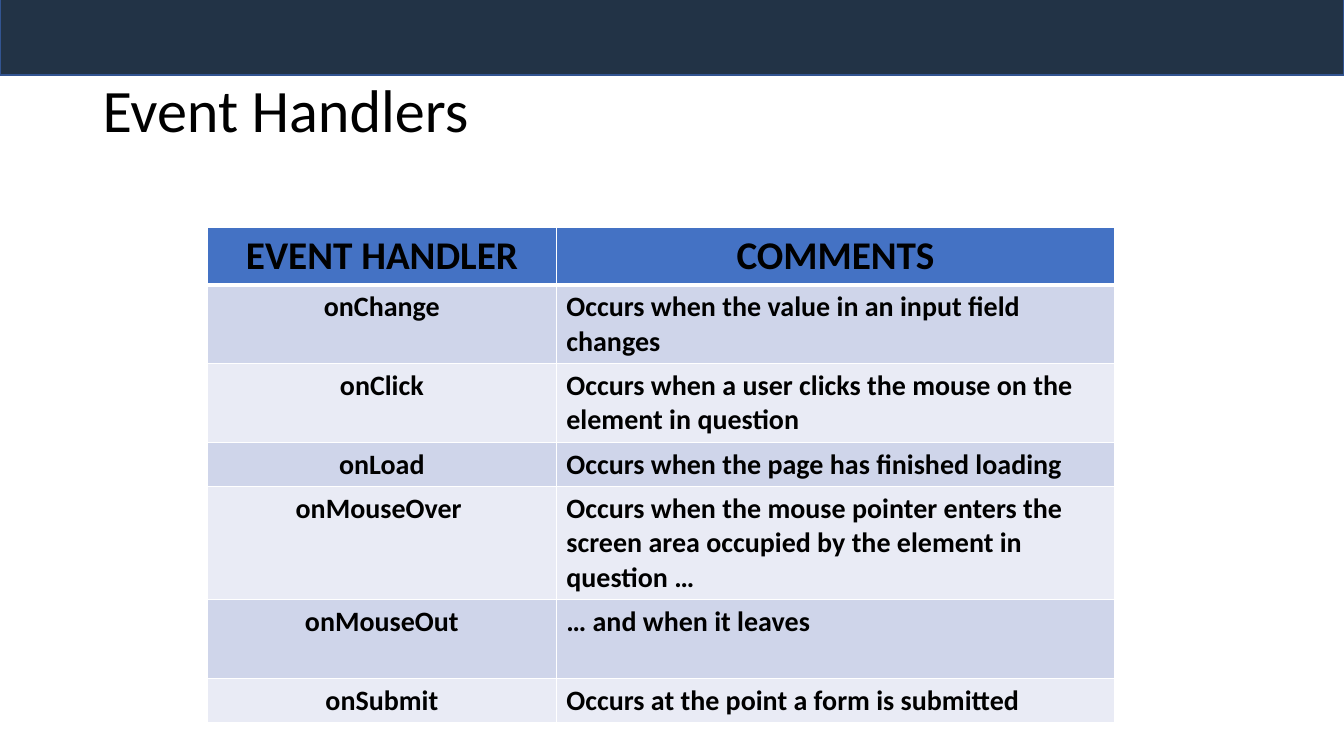
import pptx
import pptx.util
import pptx.dml.color
import pptx.enum.shapes
import pptx.enum.text
import pptx.oxml
import pptx.oxml.ns

Cm = pptx.util.Cm
Pt = pptx.util.Pt
ALIGN = pptx.enum.text.PP_ALIGN
FONT = "Calibri"

HEADERS = ("EVENT HANDLER", "COMMENTS")
HANDLERS = [
    ("onChange", "Occurs when the value in an input field changes", 1.98),
    ("onClick", "Occurs when a user clicks the mouse on the element in question", 1.98),
    ("onLoad", "Occurs when the page has finished loading", 1.12),
    ("onMouseOver ", "Occurs when the mouse pointer enters the screen area "
     "occupied by the element in question …", 2.84),
    ("onMouseOut", "… and when it leaves", 1.98),
    ("onSubmit", "Occurs at the point a form is submitted", 1.12),
]


def rgb(value):
    return pptx.dml.color.RGBColor.from_string(value)


def style(p, size, align, bold=False):
    p.alignment = align
    p.font.name = FONT
    p.font.size = Pt(size)
    p.font.bold = bold
    p.font.color.rgb = rgb("000000")


def add_band(s, left, top, width, height):
    sp = s.shapes.add_shape(pptx.enum.shapes.MSO_SHAPE.RECTANGLE, left, top, width, height)
    sp.shadow.inherit = False
    sp.fill.solid()
    sp.fill.fore_color.rgb = rgb("223346")
    sp.line.color.rgb = rgb("325491")
    sp.line.width = Pt(1)


def add_title(s, left, top, width, height):
    sp = s.shapes.title
    sp.left, sp.top, sp.width, sp.height = left, top, width, height
    tf = sp.text_frame
    tf.text = "Event Handlers"
    tf.word_wrap = True
    tf.auto_size = pptx.enum.text.MSO_AUTO_SIZE.NONE
    tf.vertical_anchor = pptx.enum.text.MSO_ANCHOR.MIDDLE
    p = tf.paragraphs[0]
    p.line_spacing = 0.9
    style(p, 43, ALIGN.LEFT)


def set_borders(cell, bottom):
    tcPr = cell._tc.get_or_add_tcPr()
    for side, width in (("L", 1), ("R", 1), ("T", 1), ("B", bottom)):
        tcPr.append(pptx.oxml.parse_xml(
            f'<a:ln{side} {pptx.oxml.ns.nsdecls("a")} w="{Pt(width)}">'
            f'<a:solidFill><a:srgbClr val="FFFFFF"/></a:solidFill></a:ln{side}>'))


def fill_cell(cell, text, size, align, color, bottom=1):
    set_borders(cell, bottom)
    cell.fill.solid()
    cell.fill.fore_color.rgb = rgb(color)
    cell.text = text
    style(cell.text_frame.paragraphs[0], size, align, True)


def add_handlers(s, left, top, width, height):
    table = s.shapes.add_table(len(HANDLERS) + 1, 2, left, top, width, height).table
    table.columns[0].width = Cm(8.79)
    table.columns[1].width = width - Cm(8.79)
    table.rows[0].height = Cm(1.44)
    for col, text in enumerate(HEADERS):
        fill_cell(table.cell(0, col), text, 28, ALIGN.CENTER, "4472C4", 3)
    for row, (name, comment, row_height) in enumerate(HANDLERS, 1):
        table.rows[row].height = Cm(row_height)
        color = "CFD5EA" if row % 2 else "E9EBF5"
        fill_cell(table.cell(row, 0), name, 20, ALIGN.CENTER, color)
        fill_cell(table.cell(row, 1), comment, 20, ALIGN.LEFT, color)


def main():
    prs = pptx.Presentation()
    prs.slide_width, prs.slide_height = Cm(33.87), Cm(19.05)
    s = prs.slides.add_slide(prs.slide_layouts[5])
    add_band(s, 0, Cm(-0.09), prs.slide_width, Cm(1.98))
    add_title(s, Cm(2.33), Cm(1.01), Cm(29.21), Cm(3.68))
    add_handlers(s, Cm(5.23), Cm(5.72), Cm(22.86), Cm(12.46))
    prs.save("out.pptx")


if __name__ == "__main__":
    main()
